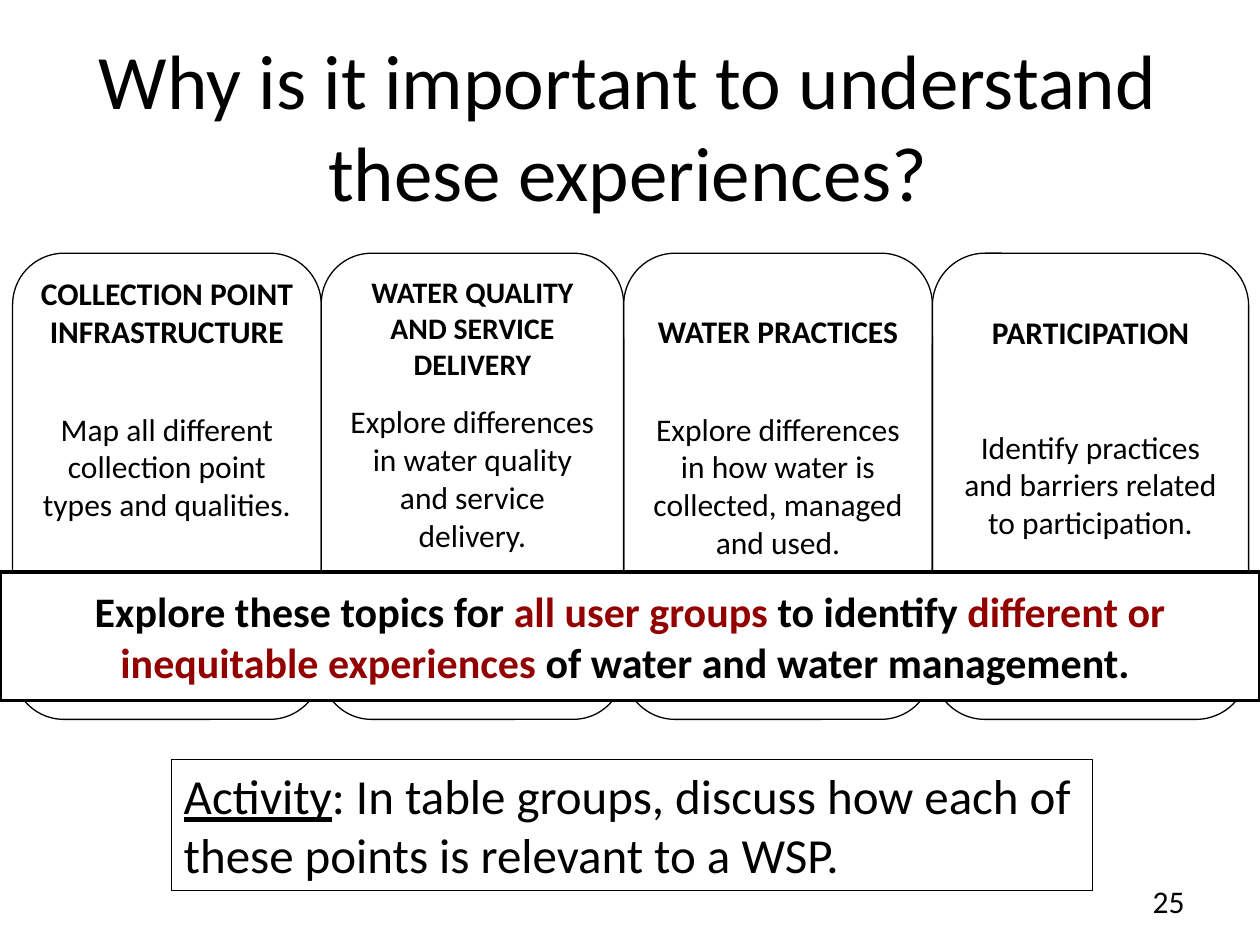
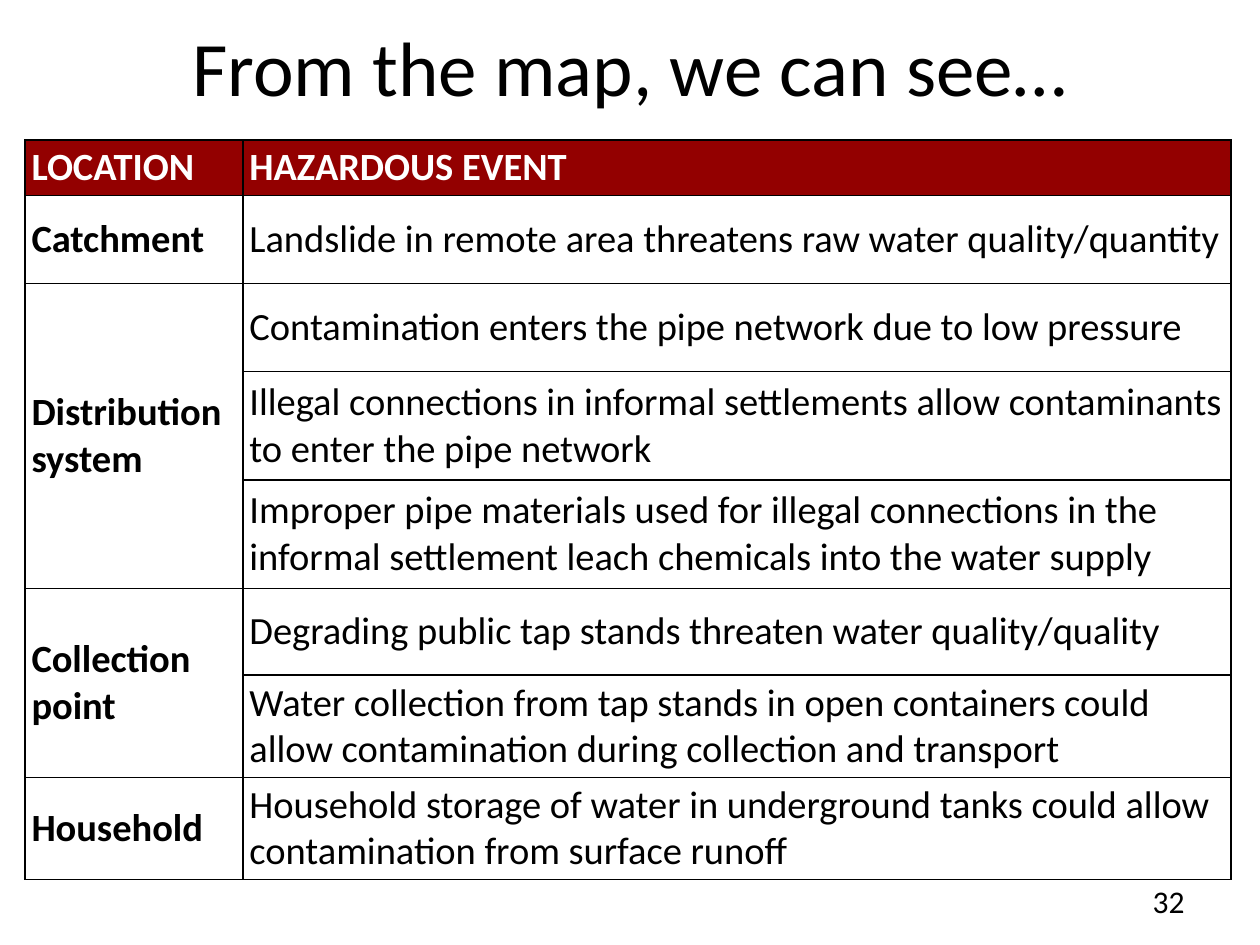
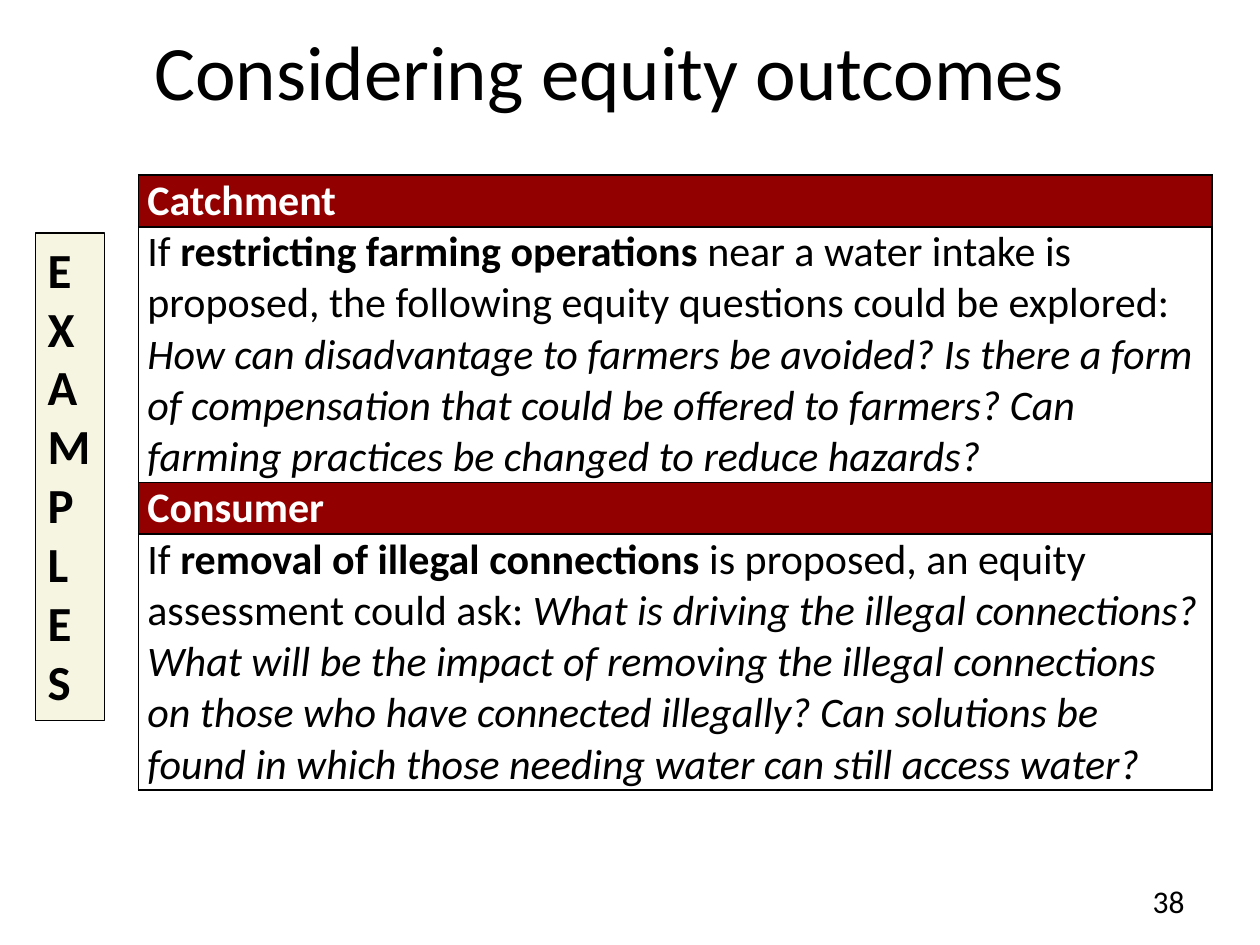
from lxml import etree
from pptx import Presentation
from pptx.dml.color import RGBColor
from pptx.enum import shapes, text
from pptx.oxml import ns
from pptx.util import Inches, Pt

FONT = "Calibri"
BLACK, WHITE, RED, CREAM = "000000", "FFFFFF", "930000", "EEECC2"
LEFT, CENTER, RIGHT = text.PP_ALIGN.LEFT, text.PP_ALIGN.CENTER, text.PP_ALIGN.RIGHT
TOP, MIDDLE = text.MSO_ANCHOR.TOP, text.MSO_ANCHOR.MIDDLE


def color(value):
    return RGBColor.from_string(value)


def inches(box):
    return [Inches(length) for length in box]


def write(para, spans, size, align=LEFT, ink=BLACK, bold=False):
    """Add runs: each span is a text, or a text with its own font settings."""
    para.alignment = align
    for span in spans:
        words, changes = (span, {}) if isinstance(span, str) else span
        style = {"ink": ink, "bold": bold, **changes}
        run = para.add_run()
        run.text = words
        run.font.name, run.font.size = FONT, Pt(size)
        run.font.color.rgb = color(style["ink"])
        run.font.bold = style["bold"]
        run.font.italic = style.get("italic", False)
        run.font.underline = style.get("underline", False)


def add_label(page, words, box, size, align, anchor=MIDDLE):
    frame = page.shapes.add_textbox(*inches(box)).text_frame
    frame.word_wrap, frame.vertical_anchor = True, anchor
    write(frame.paragraphs[0], [words], size, align)


def add_panel(page, box, line_width, fill=None, kind="RECTANGLE", anchor=TOP):
    """Draw an outlined shape and return it, ready for text."""
    panel = page.shapes.add_shape(getattr(shapes.MSO_SHAPE, kind), *inches(box))
    panel.shadow.inherit = False
    panel.line.color.rgb, panel.line.width = color(BLACK), Pt(line_width)
    if fill:
        panel.fill.solid()
        panel.fill.fore_color.rgb = color(fill)
    else:
        panel.fill.background()
    panel.text_frame.word_wrap = True
    panel.text_frame.vertical_anchor = anchor
    return panel


def add_page(deck, title, title_box, number, anchor=MIDDLE):
    page = deck.slides.add_slide(deck.slide_layouts[6])
    add_label(page, title, title_box, 44, CENTER, anchor)
    add_label(page, number, (7.17, 6.95, 2.33, 0.4), 18, RIGHT)
    return page


def add_grid(page, left, top, widths, heights):
    """Add a table without style bands."""
    box = inches((left, top, sum(widths), sum(heights)))
    table = page.shapes.add_table(len(heights), len(widths), *box).table
    table.first_row = table.horz_banding = False
    for column, width in zip(table.columns, widths):
        column.width = Inches(width)
    for row, height in zip(table.rows, heights):
        row.height = Inches(height)
    return table


def style_cell(cell, fill, margins, sides="LRTB"):
    """Set borders, fill and margins; sides not named get no line."""
    properties = cell._tc.get_or_add_tcPr()
    for side in "LRTB":
        line = etree.SubElement(properties, ns.qn("a:ln" + side), w=str(Pt(1)))
        if side in sides:
            solid = etree.SubElement(line, ns.qn("a:solidFill"))
            etree.SubElement(solid, ns.qn("a:srgbClr"), val=BLACK)
        else:
            etree.SubElement(line, ns.qn("a:noFill"))
    cell.fill.solid()
    cell.fill.fore_color.rgb = color(fill)
    across, down = inches(margins)
    cell.margin_left = cell.margin_right = across
    cell.margin_top = cell.margin_bottom = down
    cell.vertical_anchor = MIDDLE


# heading, heading size, body, card width, space above heading (in), gap to body (pt)
TOPICS = [
    ("COLLECTION POINT INFRASTRUCTURE", 18,
     "Map all different collection point types and qualities.", 2.45, 0, 34),
    ("WATER QUALITY AND SERVICE DELIVERY", 17,
     "Explore differences in water quality and service delivery.", 2.4, 0, 12),
    ("WATER PRACTICES", 18,
     "Explore differences in how water is collected, managed and used.", 2.45, 0.3, 34),
    ("PARTICIPATION", 18,
     "Identify practices and barriers related to participation.", 2.51, 0.3, 44),
]


def add_topic_cards(page, left, top, height):
    for heading, size, body, width, space, gap in TOPICS:
        card = add_panel(page, (left, top, width, height), 0.75, kind="ROUNDED_RECTANGLE")
        frame = card.text_frame
        frame.margin_top = Inches(0.05 + space)
        write(frame.paragraphs[0], [heading], size, CENTER, bold=True)
        para = frame.add_paragraph()
        para.space_before = Pt(gap)
        write(para, [body], 18, CENTER)
        left += width


def build_experiences(deck):
    page = add_page(deck, "Why is it important to understand these experiences?",
                    (-0.02, 0.21, 10.01, 1.5), "25", TOP)
    add_topic_cards(page, 0.1, 2.01, 3.7)

    banner = add_panel(page, (0, 4.54, 10, 1.02), 2, WHITE, anchor=MIDDLE)
    accent = {"ink": RED}
    write(banner.text_frame.paragraphs[0], [
        "Explore these topics for ", ("all user groups ", accent), "to identify ",
        ("different or inequitable experiences ", accent),
        "of water and water management. "], 24, CENTER, bold=True)

    activity = add_panel(page, (1.36, 6.03, 7.31, 1.04), 0.5)
    write(activity.text_frame.paragraphs[0], [
        ("Activity", {"underline": True}),
        ": In table groups, discuss how each of these points is relevant to a WSP."], 28)


HAZARDS = [
    ("Catchment", ["Landslide in remote area threatens raw water quality/quantity"]),
    ("Distribution system", [
        "Contamination enters the pipe network due to low pressure",
        "Illegal connections in informal settlements allow contaminants "
        "to enter the pipe network",
        "Improper pipe materials used for illegal connections in the informal "
        "settlement leach chemicals into the water supply"]),
    ("Collection point", [
        "Degrading public tap stands threaten water quality/quality",
        "Water collection from tap stands in open containers could allow "
        "contamination during collection and transport"]),
    ("Household", [
        "Household storage of water in underground tanks could allow "
        "contamination from surface runoff"]),
]


def add_hazard_table(page, left, top):
    table = add_grid(page, left, top, [1.73, 7.84],
                     [0.44, 0.7, 0.7, 0.86, 0.86, 0.69, 0.81, 0.81])

    def fill_cell(row, column, words, ink=BLACK, bold=True):
        para = table.cell(row, column).text_frame.paragraphs[0]
        para.space_before = para.space_after = Pt(2)
        write(para, [words], 22, ink=ink, bold=bold)

    for index, row in enumerate(table.rows):
        for cell in row.cells:
            style_cell(cell, WHITE if index else RED, (0.05, 0.03))
    for column, heading in enumerate(["LOCATION", "HAZARDOUS EVENT"]):
        fill_cell(0, column, heading, WHITE)
    first = 1
    for location, events in HAZARDS:
        fill_cell(first, 0, location)
        for row, event in enumerate(events, first):
            fill_cell(row, 1, event, bold=False)
        last = first + len(events) - 1
        if last > first:
            table.cell(first, 0).merge(table.cell(last, 0))
        first = last + 1


def build_hazards(deck):
    page = add_page(deck, "From the map, we can see…", (0, -0.1, 10, 1.25), "32")
    add_hazard_table(page, 0.2, 1.11)


# heading, proposed measure, rest of the sentence, questions
EQUITY_CASES = [
    ("Catchment", "restricting farming operations ",
     "near a water intake is proposed, the following equity questions could be explored: ",
     "How can disadvantage to farmers be avoided? Is there a form of compensation that "
     "could be offered to farmers? Can farming practices be changed to reduce hazards?"),
    ("Consumer", "removal of illegal connections ",
     "is proposed, an equity assessment could ask: ",
     "What is driving the illegal connections? What will be the impact of removing the "
     "illegal connections on those who have connected illegally? Can solutions be found "
     "in which those needing water can still access water?"),
]


def add_equity_table(page, left, top):
    table = add_grid(page, left, top, [4.44, 4.08], [0.41, 2.03] * len(EQUITY_CASES))
    margins = (0.07, 0)
    for index, (heading, measure, sentence, questions) in enumerate(EQUITY_CASES):
        header = [table.cell(2 * index, column) for column in (0, 1)]
        body = [table.cell(2 * index + 1, column) for column in (0, 1)]
        for cell, sides in zip(header, ["LTB", "RTB"]):
            style_cell(cell, RED, margins, sides)
        for cell in body:
            style_cell(cell, WHITE, margins)
        body[0].merge(body[1])
        write(header[0].text_frame.paragraphs[0], [heading], 24, ink=WHITE, bold=True)
        write(body[0].text_frame.paragraphs[0], [
            "If ", (measure, {"bold": True}), sentence, (questions, {"italic": True})], 24)


def add_examples_strip(page, box):
    strip = add_panel(page, box, 0.75, CREAM)
    tint = strip._element.spPr.find(ns.qn("a:solidFill")).find(ns.qn("a:srgbClr"))
    etree.SubElement(tint, ns.qn("a:alpha"), val="48000")
    frame = strip.text_frame
    write(frame.paragraphs[0], ["EXAMPLE"], 28, bold=True)
    write(frame.add_paragraph(), ["S"], 28, bold=True)


def build_equity(deck):
    page = add_page(deck, "Considering equity outcomes", (0, 0.15, 9.68, 0.8), "38")
    add_equity_table(page, 1.1, 1.39)
    add_examples_strip(page, (0.28, 1.85, 0.55, 3.87))


def main():
    deck = Presentation()
    deck.slide_width, deck.slide_height = Inches(10), Inches(7.5)
    build_experiences(deck)
    build_hazards(deck)
    build_equity(deck)
    deck.save("out.pptx")


if __name__ == "__main__":
    main()
